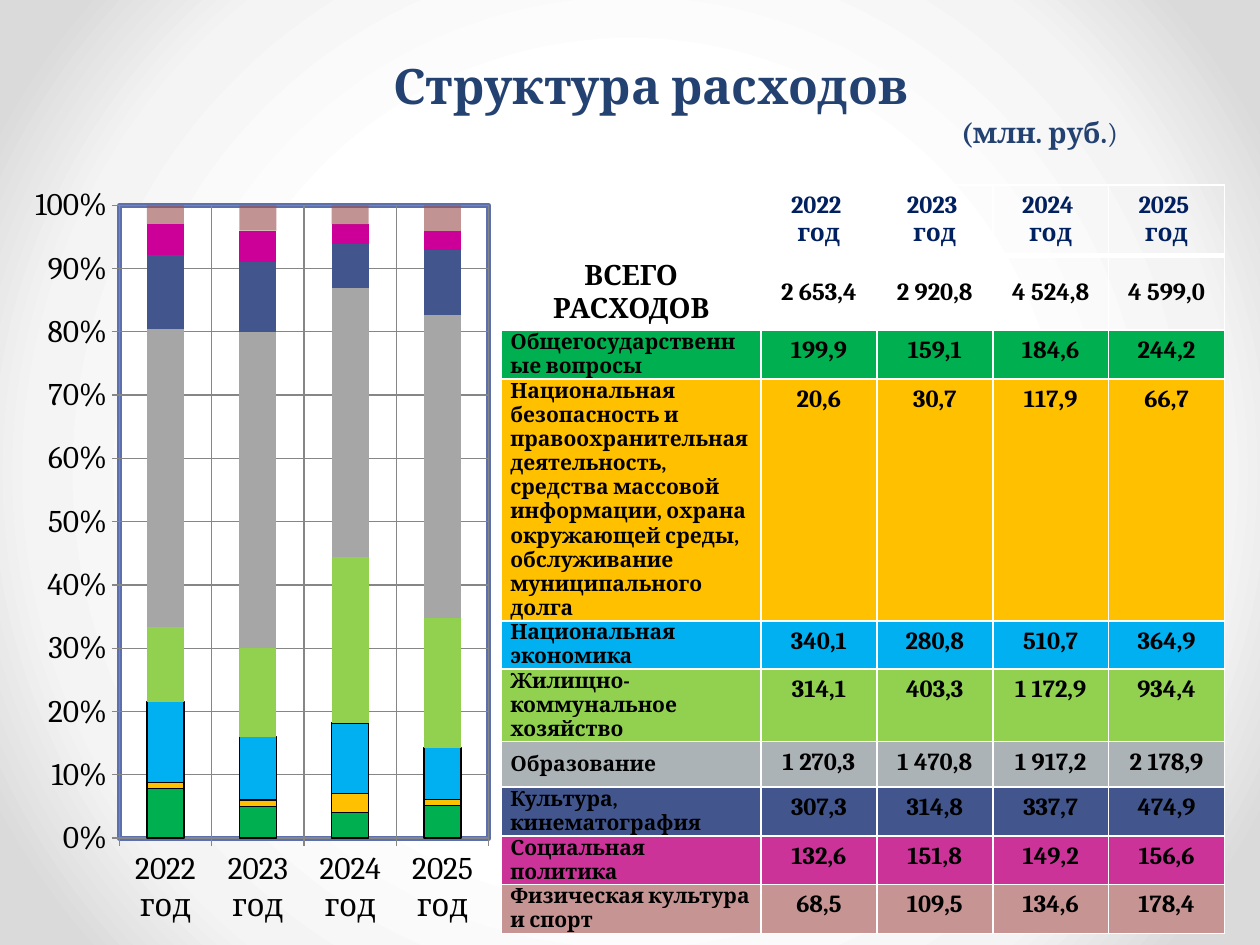
import pptx
import pptx.chart.data
import pptx.dml.color
import pptx.enum.chart
import pptx.enum.text
import pptx.oxml
import pptx.util
from pptx.oxml.ns import nsdecls, qn
from pptx.util import Inches

RGBColor = pptx.dml.color.RGBColor
Pt = pptx.util.Pt
PP_ALIGN = pptx.enum.text.PP_ALIGN
MSO_ANCHOR = pptx.enum.text.MSO_ANCHOR

TITLE_BLUE = RGBColor(0x23, 0x42, 0x71)
HEADER_BLUE = RGBColor(0x00, 0x20, 0x60)
FRAME_BLUE = RGBColor(0x5C, 0x70, 0xAE)
GRID_GRAY = RGBColor(0x86, 0x86, 0x86)
BLACK = RGBColor(0x00, 0x00, 0x00)
WHITE = RGBColor(0xFF, 0xFF, 0xFF)
GREEN = RGBColor(0x00, 0xB0, 0x50)
AMBER = RGBColor(0xFF, 0xC0, 0x00)
SKY = RGBColor(0x00, 0xB0, 0xF0)
LIME = RGBColor(0x92, 0xD0, 0x50)
INDIGO = RGBColor(0x42, 0x56, 0x8D)
BAR_GRAY = RGBColor(0xA6, 0xA6, 0xA6)
CELL_GRAY = RGBColor(0xAC, 0xB3, 0xB6)
BAR_PINK = RGBColor(0xCC, 0x00, 0x99)
CELL_PINK = RGBColor(0xCC, 0x33, 0x99)
BAR_BROWN = RGBColor(0x9C, 0x52, 0x52)
CELL_BROWN = RGBColor(0xC7, 0x94, 0x94)

YEARS = ["2022", "2023", "2024", "2025"]
TOTALS = ["2 653,4", "2 920,8", "4 524,8", "4 599,0"]
# label, amounts, bar colour, cell colour, row height
EXPENSES = [
    ("Общегосударственные вопросы",
     ["199,9", "159,1", "184,6", "244,2"], GREEN, GREEN, 0.39),
    ("Национальная безопасность и правоохранительная деятельность,\n"
     "средства массовой информации, охрана окружающей среды, "
     "обслуживание муниципального долга",
     ["20,6", "30,7", "117,9", "66,7"], AMBER, AMBER, 1.77),
    ("Национальная экономика",
     ["340,1", "280,8", "510,7", "364,9"], SKY, SKY, 0.36),
    ("Жилищно-коммунальное хозяйство",
     ["314,1", "403,3", "1 172,9", "934,4"], LIME, LIME, 0.39),
    ("Образование",
     ["1 270,3", "1 470,8", "1 917,2", "2 178,9"], BAR_GRAY, CELL_GRAY, 0.36),
    ("Культура, кинематография",
     ["307,3", "314,8", "337,7", "474,9"], INDIGO, INDIGO, 0.39),
    ("Социальная политика",
     ["132,6", "151,8", "149,2", "156,6"], BAR_PINK, CELL_PINK, 0.36),
    ("Физическая культура и спорт",
     ["68,5", "109,5", "134,6", "178,4"], BAR_BROWN, CELL_BROWN, 0.39),
]


def to_number(amount):
    return float(amount.replace(" ", "").replace(",", "."))


def fill_cell(cell, text, size, color, align, fill, bottom_width=1):
    """Write bold text in a cell and give it white borders and a fill."""
    cell.text_frame.text = text
    for paragraph in cell.text_frame.paragraphs:
        paragraph.alignment = align
        paragraph.font.size = Pt(size)
        paragraph.font.bold = True
        paragraph.font.name = "Cambria"
        paragraph.font.color.rgb = color
    properties = cell._tc.get_or_add_tcPr()
    for side, width in (("L", 1), ("R", 1), ("T", 1), ("B", bottom_width)):
        properties.append(pptx.oxml.parse_xml(
            f'<a:ln{side} {nsdecls("a")} w="{Pt(width)}"><a:solidFill>'
            f'<a:srgbClr val="{WHITE}"/></a:solidFill></a:ln{side}>'))
    if fill is None:
        cell.fill.background()
    else:
        cell.fill.solid()
        cell.fill.fore_color.rgb = fill


presentation = pptx.Presentation()
presentation.slide_width = Inches(10)
presentation.slide_height = Inches(7.5)
slide = presentation.slides.add_slide(presentation.slide_layouts[5])

# Background: white centre fading to gray corners
stops = "".join(
    f'<a:gs pos="{position * 1000}"><a:srgbClr val="{color}"/></a:gs>'
    for position, color in ((50, "FFFFFF"), (76, "F4F4F4"), (92, "DADADA")))
slide.background.fill.solid()
background = slide.background.fill._xPr
background.replace(background.find(qn("a:solidFill")), pptx.oxml.parse_xml(
    f'<a:gradFill {nsdecls("a")} rotWithShape="1"><a:gsLst>{stops}</a:gsLst>'
    '<a:path path="circle"><a:fillToRect l="50000" t="50000" r="50000" b="50000"/>'
    '</a:path></a:gradFill>'))

# Title with the unit of measure under it
title = slide.shapes.title
title.left, title.top = Inches(0.12), Inches(0.44)
title.width, title.height = Inches(9.69), Inches(0.79)
title.text_frame.text = "Структура расходов\n(млн. руб."
title.text_frame.vertical_anchor = MSO_ANCHOR.BOTTOM
title.text_frame.auto_size = pptx.enum.text.MSO_AUTO_SIZE.NONE
closing_bracket = title.text_frame.paragraphs[1].add_run()
closing_bracket.text = ")"
for paragraph, size, align, indent in zip(
        title.text_frame.paragraphs, (27.9, 16.2),
        (PP_ALIGN.CENTER, PP_ALIGN.LEFT), (0.4, 7.41)):
    paragraph.alignment = align
    paragraph._p.get_or_add_pPr().set("marL", str(Inches(indent)))
    for run in paragraph.runs:
        run.font.size = Pt(size)
        run.font.name = "Cambria"
        run.font.bold = True
        run.font.color.rgb = TITLE_BLUE
closing_bracket.font.bold = False

# Chart: share of each expense in the year's total, in whole percent
chart_data = pptx.chart.data.CategoryChartData()
chart_data.categories = [f"{year} год" for year in YEARS]
for label, amounts, *_ in EXPENSES:
    chart_data.add_series(label.replace("\n", " "), [
        round(100 * to_number(amount) / to_number(total))
        for amount, total in zip(amounts, TOTALS)])
chart = slide.shapes.add_chart(
    pptx.enum.chart.XL_CHART_TYPE.COLUMN_STACKED_100,
    Inches(0.12), Inches(1.39), Inches(3.78), Inches(5.98), chart_data).chart
chart.has_legend = False
chart.has_title = False
chart.font.size = Pt(18)
chart.font.name = "TeX Gyre Pagella"
chart.font.color.rgb = BLACK
for axis in (chart.category_axis, chart.value_axis):
    axis.has_major_gridlines = True
    axis.major_gridlines.format.line.color.rgb = GRID_GRAY
    axis.format.line.color.rgb = GRID_GRAY
    axis.major_tick_mark = pptx.enum.chart.XL_TICK_MARK.OUTSIDE
    axis.tick_labels.font.name = "Cambria"
    axis.tick_labels.font.size = Pt(18)
chart.value_axis.tick_labels.number_format = "0%"
chart.value_axis.tick_labels.number_format_is_linked = False

plot = chart.plots[0]
plot.gap_width = 150
plot.overlap = 100
plot.vary_by_categories = False
for index, (series, expense) in enumerate(zip(plot.series, EXPENSES)):
    series.format.fill.solid()
    series.format.fill.fore_color.rgb = expense[2]
    if index < 3:
        series.format.line.color.rgb = BLACK
        series.format.line.width = Pt(0.75)
bar_color = plot.series[-1]._element.find(".//" + qn("a:srgbClr"))
bar_color.append(pptx.oxml.parse_xml(f'<a:alpha {nsdecls("a")} val="62000"/>'))

plot_area = chart._chartSpace.chart.plotArea
for layout in plot_area.findall(qn("c:layout")):
    plot_area.remove(layout)
positions = "".join(
    f'<c:{name} val="{value}"/>' for name, value in (
        ("layoutTarget", "inner"), ("xMode", "edge"), ("yMode", "edge"),
        ("x", 0.22), ("y", 0.04), ("w", 0.78), ("h", 0.84)))
plot_area.insert(0, pptx.oxml.parse_xml(
    f'<c:layout {nsdecls("c")}><c:manualLayout>{positions}</c:manualLayout></c:layout>'))
plot_area.append(pptx.oxml.parse_xml(
    f'<c:spPr {nsdecls("c", "a")}><a:solidFill><a:srgbClr val="{WHITE}"/></a:solidFill>'
    f'<a:ln w="{Pt(3)}"><a:solidFill><a:srgbClr val="{FRAME_BLUE}"/></a:solidFill></a:ln>'
    '</c:spPr>'))

# Table of expenses by year
row_heights = [0.56, 0.59] + [expense[4] for expense in EXPENSES]
table = slide.shapes.add_table(
    len(row_heights), 5, Inches(3.98), Inches(1.47), Inches(5.74), Inches(5.55)).table
table.first_row = False
table.horz_banding = False
for column, width in zip(table.columns, [2.06] + [0.92] * 4):
    column.width = Inches(width)
for row, height in zip(table.rows, row_heights):
    row.height = Inches(height)

fill_cell(table.cell(0, 0), "", 14, HEADER_BLUE, PP_ALIGN.CENTER, None, 3)
for column, year in enumerate(YEARS, 1):
    fill_cell(table.cell(0, column), f"{year} \nгод", 14, HEADER_BLUE,
              PP_ALIGN.CENTER, None, 3)

body_rows = [("ВСЕГО РАСХОДОВ", TOTALS, None, None, None)] + EXPENSES
for row, (label, amounts, _, fill, _) in enumerate(body_rows, 1):
    is_total = row == 1
    label_cell = table.cell(row, 0)
    fill_cell(label_cell, label, 16 if is_total else 12, BLACK,
              PP_ALIGN.CENTER if is_total else PP_ALIGN.LEFT, fill)
    label_cell.vertical_anchor = MSO_ANCHOR.MIDDLE
    label_cell.margin_left = label_cell.margin_right = Inches(0.07)
    label_cell.margin_top = label_cell.margin_bottom = 0
    for column, amount in enumerate(amounts, 1):
        amount_cell = table.cell(row, column)
        fill_cell(amount_cell, amount, 14, BLACK, PP_ALIGN.CENTER, fill)
        if is_total:
            amount_cell.vertical_anchor = MSO_ANCHOR.MIDDLE

presentation.save("out.pptx")
